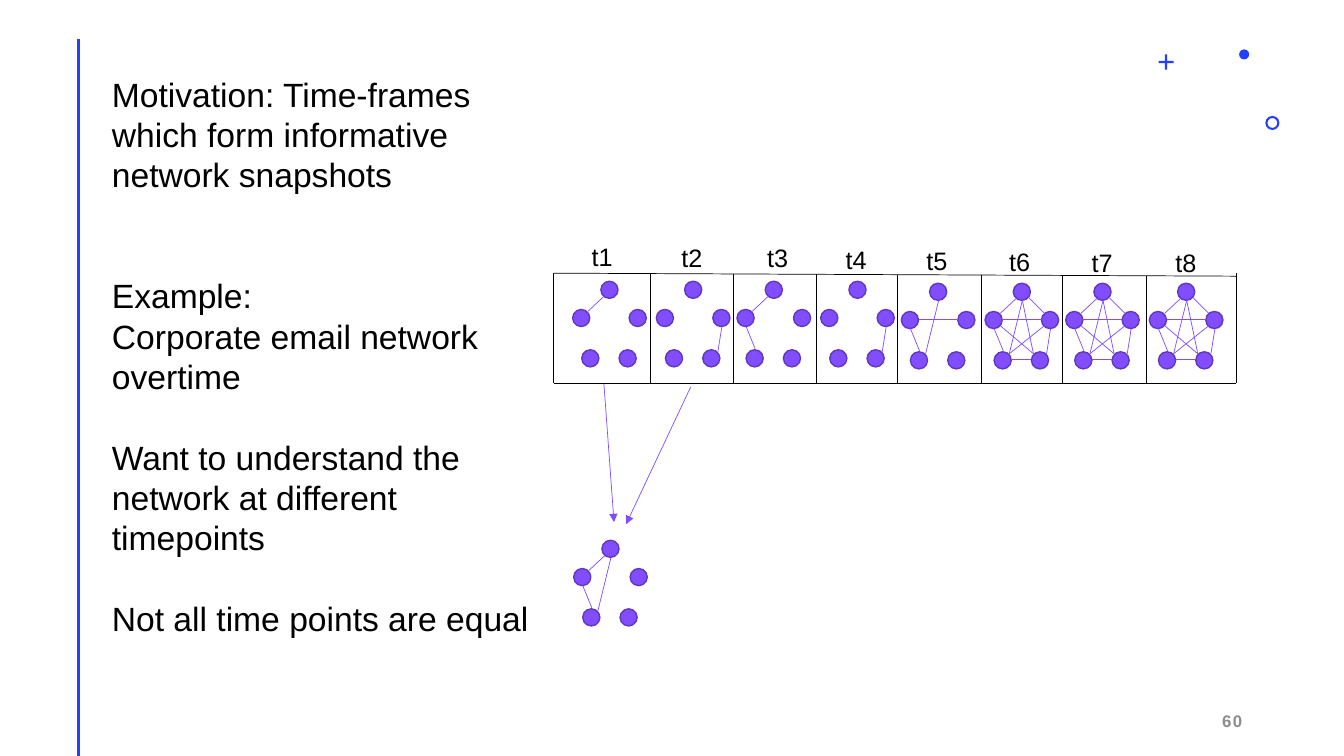
from lxml.etree import SubElement
from pptx import Presentation
from pptx.dml.color import RGBColor
from pptx.enum.shapes import MSO_CONNECTOR as Connector, MSO_SHAPE as Preset
from pptx.enum.text import MSO_ANCHOR as Anchor, MSO_AUTO_SIZE as AutoSize, PP_ALIGN as Align
from pptx.oxml.ns import qn
from pptx.util import Pt

EMU_PER_PX = 9144  # 100 px to the inch
NODE_SIZE = 17
NODES = [(0, 28), (28, 0), (56, 28), (9, 68), (46, 68)]
EDGES = {
    "left-top": (31, 15, 15, 30),
    "top-right": (43, 14, 59, 30),
    "left-low_left": (9, 45, 18, 67),
    "low_left-low_right": (26, 76, 46, 76),
    "low_right-right": (61, 70, 65, 45),
    "top-low_left": (37, 17, 24, 70),
    "top-low_right": (37, 17, 48, 70),
    "left-right": (17, 36, 56, 36),
    "low_left-right": (24, 70, 59, 42),
    "left-low_right": (15, 42, 48, 70),
}
# left edge of the graph, its top, left edge of the label, edges
SNAPSHOTS = [
    (568, 279, 577, ["left-top"]),
    (651, 279, 666, ["low_right-right"]),
    (731, 279, 751, ["left-top", "left-low_left"]),
    (814, 279, 829, ["low_right-right"]),
    (894, 281, 909, ["top-low_left", "left-right", "left-low_left"]),
    (977, 281, 991, EDGES),
    (1057, 281, 1073, EDGES),
    (1140, 281, 1156, EDGES),
]
DIVIDERS = [549, 645, 727, 810, 890, 973, 1054, 1137]
FRAME_LEFT, FRAME_RIGHT, FRAME_TOP, FRAME_BOTTOM = 549, 1226, 271, 380
FRAME_DROP = 3


def px(*lengths):
    return [length * EMU_PER_PX for length in lengths]


def color(hex_string):
    return RGBColor.from_string(hex_string)


def write(shape, paragraphs, size=18, fill="000000", bold=False, align=Align.LEFT,
          anchor=Anchor.TOP, leading=None, gaps=(), tracking=None):
    """Fill a shape with paragraphs; gaps maps a paragraph's index to the space before it."""
    frame = shape.text_frame
    frame.word_wrap = True
    frame.auto_size = AutoSize.NONE
    frame.vertical_anchor = anchor
    for index, text in enumerate(paragraphs):
        paragraph = frame.add_paragraph() if index else frame.paragraphs[0]
        paragraph.alignment = align
        paragraph.space_before = Pt(dict(gaps).get(index, 0))
        if leading:
            paragraph.line_spacing = Pt(leading)
        properties = paragraph._p.get_or_add_pPr()
        properties.set("marL", "0")
        properties.set("indent", "0")
        SubElement(properties, qn("a:buNone"))
        run = paragraph.add_run()
        run.text = text
        run.font.name = "Arial"
        run.font.size = Pt(size)
        run.font.bold = bold
        run.font.color.rgb = color(fill)
        if tracking:
            run._r.get_or_add_rPr().set("spc", str(tracking * 100))


class SlideBuilder:
    ACCENT = "243FFF"
    NODE_FILL = "814DFF"
    NODE_LINE = "5F39BD"
    INK = "000000"

    def __init__(self, slide):
        self.slide = slide

    def place(self, shape, left, top, width, height):
        shape.left, shape.top, shape.width, shape.height = px(left, top, width, height)
        return shape

    def shape(self, preset, left, top, width, height, fill, outline=None, adjustment=None):
        shape = self.slide.shapes.add_shape(preset, *px(left, top, width, height))
        shape.shadow.inherit = False
        shape.fill.solid()
        shape.fill.fore_color.rgb = color(fill)
        if outline:
            shape.line.color.rgb = color(outline)
            shape.line.width = Pt(1)
        else:
            shape.line.fill.background()
        if adjustment is not None:
            shape.adjustments[0] = adjustment

    def line(self, x1, y1, x2, y2, stroke, width=0.5, arrow=False):
        connector = self.slide.shapes.add_connector(Connector.STRAIGHT, *px(x1, y1, x2, y2))
        connector.line.color.rgb = color(stroke)
        connector.line.width = Pt(width)
        if arrow:
            SubElement(connector.line._get_or_add_ln(), qn("a:tailEnd"), type="triangle")
        SubElement(connector._element.spPr, qn("a:effectLst"))

    def text(self, left, top, width, height, content, **text_format):
        box = self.slide.shapes.add_textbox(*px(left, top, width, height))
        write(box, [content], **text_format)

    def graph(self, left, top, edges):
        for x, y in NODES:
            self.shape(Preset.OVAL, left + x, top + y, NODE_SIZE, NODE_SIZE,
                       self.NODE_FILL, self.NODE_LINE)
        for name in edges:
            x1, y1, x2, y2 = EDGES[name]
            self.line(left + x1, top + y1, left + x2, top + y2, self.NODE_FILL)

    def decoration(self):
        self.line(78, 39, 78, 750, self.ACCENT, width=2)
        self.shape(Preset.CROSS, 1149, 54, 15, 15, self.ACCENT, adjustment=0.43)
        self.shape(Preset.DONUT, 1255, 115, 14, 14, self.ACCENT, adjustment=0.15)
        self.shape(Preset.OVAL, 1229, 49, 10, 10, self.ACCENT)

    def timeline(self):
        for index, (left, top, label_left, edges) in enumerate(SNAPSHOTS):
            self.graph(left, top, edges)
            self.text(label_left, min(234 + index, 240), 46, 40, f"t{index + 1}")
        self.line(FRAME_LEFT, FRAME_BOTTOM, FRAME_RIGHT, FRAME_BOTTOM, self.INK)
        self.line(FRAME_RIGHT, FRAME_TOP + FRAME_DROP, FRAME_LEFT, FRAME_TOP, self.INK)
        self.line(FRAME_RIGHT, FRAME_TOP, FRAME_RIGHT, FRAME_BOTTOM, self.INK)
        for x in DIVIDERS:
            drop = round(FRAME_DROP * (x - FRAME_LEFT) / (FRAME_RIGHT - FRAME_LEFT))
            self.line(x, FRAME_TOP + drop, x, FRAME_BOTTOM, self.INK)


def main():
    presentation = Presentation()
    presentation.slide_width, presentation.slide_height = px(1333, 750)
    slide = presentation.slides.add_slide(presentation.slide_layouts[1])
    builder = SlideBuilder(slide)
    builder.decoration()

    title = builder.place(slide.shapes.title, 101, 68, 452, 130)
    write(title, ["Motivation: Time-frames which form informative network snapshots"],
          size=24, leading=28.8)
    body = builder.place(slide.placeholders[1], 101, 268, 452, 416)
    write(body, ["Example:", "Corporate email network overtime",
                 "Want to understand the network at different timepoints",
                 "Not all time points are equal"],
          size=24, leading=28.8, gaps={2: 28.8, 3: 28.8})

    builder.timeline()
    builder.graph(569, 536, ["left-top", "left-low_left", "top-low_left"])
    builder.line(599, 381, 609, 518, builder.NODE_FILL, arrow=True)
    builder.line(685, 384, 621, 520, builder.NODE_FILL, arrow=True)
    builder.text(942, 695, 300, 40, "60", size=12, fill="8C8C8C", bold=True,
                 align=Align.RIGHT, anchor=Anchor.MIDDLE, tracking=1)
    presentation.save("out.pptx")


if __name__ == "__main__":
    main()
